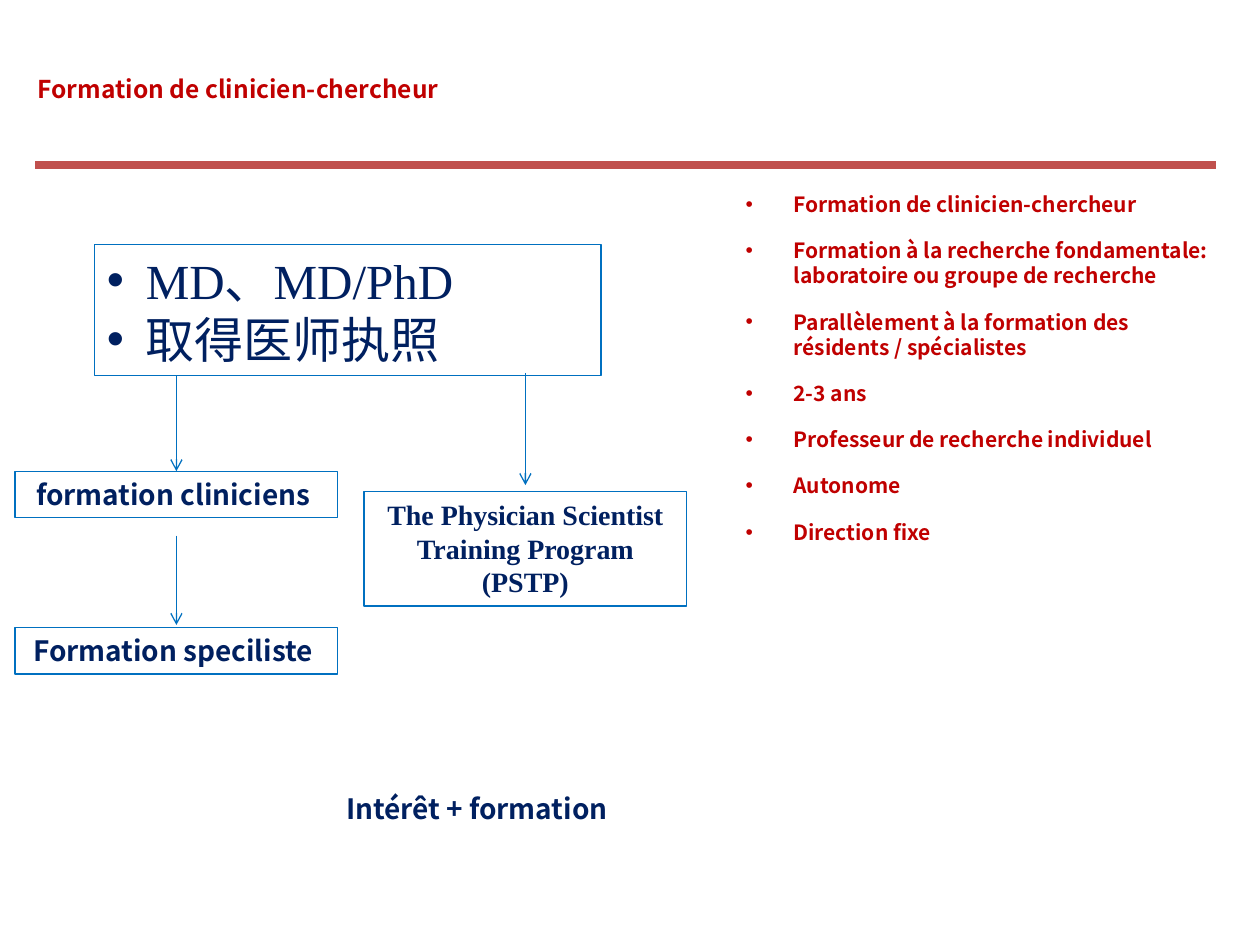
from lxml import etree
from pptx import Presentation
from pptx.dml.color import RGBColor
from pptx.enum import shapes, text
from pptx.oxml.ns import qn
from pptx.util import Inches, Pt

RED = RGBColor(0xC0, 0x00, 0x00)
RULE_RED = RGBColor(0xC0, 0x50, 0x4D)
NAVY = RGBColor(0x00, 0x20, 0x60)
BLUE = RGBColor(0x00, 0x70, 0xC0)
SANS = "Noto Sans CJK SC"
SERIF = "Times New Roman"
CENTER = text.PP_ALIGN.CENTER


class SlideBuilder:
    def __init__(self, slide):
        self.slide = slide

    def fill_text(self, shape, lines, size, color, font=SANS, bold=True,
                  align=text.PP_ALIGN.LEFT, indent=None, gap=0):
        """Fill a shape with paragraphs; indent is (margin, hanging) for bullets."""
        frame = shape.text_frame
        frame.word_wrap = True
        frame.vertical_anchor = text.MSO_ANCHOR.TOP
        for index, line in enumerate(lines):
            paragraph = frame.paragraphs[0] if index == 0 else frame.add_paragraph()
            run = paragraph.add_run()
            run.text = line
            etree.SubElement(run._r.get_or_add_rPr(), qn("a:ea"), typeface=SANS)
            paragraph.alignment = align
            if gap:
                paragraph.space_before = Pt(gap if index else 0)
                paragraph.space_after = Pt(gap)
            if indent:
                self.bullet(paragraph, *indent)
            paragraph.font.name = font
            paragraph.font.size = Pt(size)
            paragraph.font.bold = bold
            paragraph.font.color.rgb = color

    def bullet(self, paragraph, margin, hanging):
        properties = paragraph._p.get_or_add_pPr()
        properties.set("marL", str(Inches(margin)))
        properties.set("indent", str(-Inches(hanging)))
        etree.SubElement(properties, qn("a:buFont"), typeface="Arial")
        etree.SubElement(properties, qn("a:buChar"), char="•")

    def text_box(self, left, top, width, height, lines, size, color, **style):
        shape = self.slide.shapes.add_textbox(
            Inches(left), Inches(top), Inches(width), Inches(height))
        self.fill_text(shape, lines, size, color, **style)

    def box(self, left, top, width, height, lines, size, **style):
        shape = self.slide.shapes.add_shape(
            shapes.MSO_SHAPE.RECTANGLE,
            Inches(left), Inches(top), Inches(width), Inches(height))
        shape.shadow.inherit = False
        shape.fill.background()
        shape.line.color.rgb = BLUE
        shape.line.width = Pt(0.75)
        self.fill_text(shape, lines, size, NAVY, **style)
        return shape

    def line(self, start, end, color, width, arrow=False):
        connector = self.slide.shapes.add_connector(
            shapes.MSO_CONNECTOR.STRAIGHT, *map(Inches, start + end))
        connector.line.color.rgb = color
        connector.line.width = Pt(width)
        properties = connector._element.spPr
        if arrow:
            etree.SubElement(properties.get_or_add_ln(),
                             qn("a:tailEnd"), type="arrow")
        etree.SubElement(properties, qn("a:effectLst"))
        return connector

    def arrow(self, x, top, bottom):
        return self.line((x, top), (x, bottom), BLUE, 0.75, arrow=True)


def main():
    presentation = Presentation()
    presentation.slide_width, presentation.slide_height = Inches(10), Inches(7.5)
    builder = SlideBuilder(
        presentation.slides.add_slide(presentation.slide_layouts[6]))

    # Title and rule
    builder.line((0.28, 1.31), (9.65, 1.31), RULE_RED, 4.5)
    builder.text_box(0.2, 0.54, 7.17, 0.61,
                     ["Formation de clinicien-chercheur"], 14, RED)

    # Training paths
    builder.box(0.75, 1.94, 4.02, 1.04, ["MD、MD/PhD", "取得医师执照"], 28,
                font=SERIF, bold=False, indent=(0.31, 0.31))
    clinical = builder.box(0.12, 3.74, 2.56, 0.37, ["formation cliniciens "],
                           16, align=CENTER)
    builder.box(0.12, 4.98, 2.56, 0.37, ["Formation speciliste "],
                16, align=CENTER)
    builder.box(2.89, 3.9, 2.56, 0.91,
                ["The Physician Scientist Training Program (PSTP)"], 16,
                font=SERIF, align=CENTER)
    builder.arrow(1.4, 2.98, 3.74).end_connect(clinical, 0)
    builder.arrow(1.4, 4.25, 4.96)
    builder.arrow(4.17, 2.96, 3.85)

    # Features of the training
    builder.text_box(5.33, 1.47, 4.47, 2.93, [
        "Formation de clinicien-chercheur",
        "Formation à la recherche fondamentale: laboratoire ou groupe de recherche",
        "Parallèlement à la formation des résidents / spécialistes",
        "2-3 ans",
        "Professeur de recherche individuel",
        "Autonome",
        "Direction fixe",
    ], 12, RED, indent=(0.87, 0.38), gap=6)

    # Conclusion
    builder.text_box(0.87, 6.23, 5.83, 0.37, ["Intérêt + formation"],
                     16, NAVY, align=CENTER)

    presentation.save("out.pptx")


if __name__ == "__main__":
    main()
